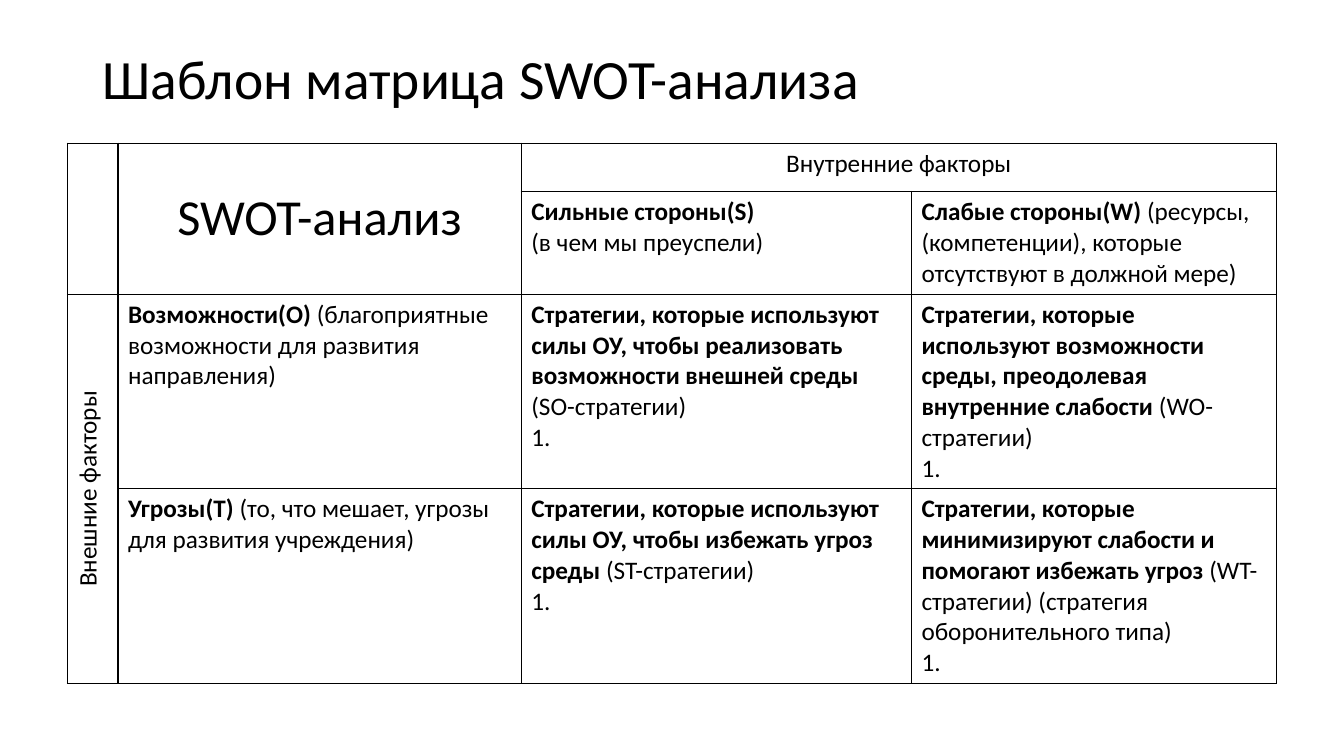
from lxml.etree import SubElement as Sub
from pptx import Presentation
from pptx.dml.color import RGBColor as Rgb
from pptx.enum.text import MSO_ANCHOR as Anchor, PP_ALIGN as Align
from pptx.oxml.ns import qn
from pptx.util import Inches, Pt

COLORS = {"ink": "000000", "paper": "FFFFFF"}
COLS = [0.5, 4, 3.87, 3.62]
ROWS = [0.48, 1.02, 1.93, 1.93]
MERGES = [((0, 0), (1, 0)), ((0, 1), (1, 1)), ((0, 2), (0, 3)), ((2, 0), (3, 0))]

# Headings: (row, column) -> text, size
HEADS = {
    (0, 1): ("SWOT-анализ", 36),
    (0, 2): ("Внутренние факторы", 18),
    (2, 0): ("Внешние факторы", 18),
}

# Factors and strategies: (row, column) -> paragraphs of (bold part, plain part)
NOTES = {
    (1, 2): [("Сильные стороны(S)", ""), ("", "(в чем мы преуспели)")],
    (1, 3): [("Слабые стороны(W) ",
              "(ресурсы, (компетенции), которые отсутствуют в должной мере)")],
    (2, 1): [("Возможности(O) ",
              "(благоприятные возможности для развития направления)")],
    (2, 2): [("Стратегии, которые используют силы ОУ, чтобы реализовать "
              "возможности внешней среды ", "(SO-стратегии)"), ("", "1.")],
    (2, 3): [("Стратегии, которые используют возможности среды, преодолевая "
              "внутренние слабости ", "(WO-стратегии)"), ("", "1.")],
    (3, 1): [("Угрозы(T) ", "(то, что мешает, угрозы для развития учреждения)")],
    (3, 2): [("Стратегии, которые используют силы ОУ, чтобы избежать угроз "
              "среды ", "(ST-стратегии)"), ("", "1.")],
    (3, 3): [("Стратегии, которые минимизируют слабости и помогают избежать "
              "угроз ", "(WT-стратегии) (стратегия оборонительного типа)"),
             ("", "1.")],
}


class Deck:
    font = "Calibri"

    def __init__(self):
        self.prs = Presentation()
        self.prs.slide_width = Inches(13.33)
        self.prs.slide_height = Inches(7.5)
        self.slide = self.prs.slides.add_slide(self.prs.slide_layouts[6])

    def text(self, frame, paras, size, align=Align.LEFT):
        """Fill a text frame with paragraphs of (bold part, plain part)."""
        for i, parts in enumerate(paras):
            para = frame.add_paragraph() if i else frame.paragraphs[0]
            para.alignment = align
            para.font.name = self.font
            para.font.size = Pt(size)
            para.font.color.rgb = Rgb.from_string(COLORS["ink"])
            for part, bold in zip(parts, (True, False)):
                if part:
                    run = para.add_run()
                    run.text = part
                    run.font.bold = bold

    def title(self, text, left, top, width, height, size):
        box = self.slide.shapes.add_textbox(*map(Inches, (left, top, width, height)))
        frame = box.text_frame
        frame.word_wrap = True
        frame.vertical_anchor = Anchor.MIDDLE
        self.text(frame, [("", text)], size)
        frame.paragraphs[0].line_spacing = 0.9

    def border(self, cell):
        props = cell._tc.get_or_add_tcPr()
        for side in ("lnL", "lnR", "lnT", "lnB"):
            line = Sub(props, qn(f"a:{side}"), w=str(Pt(1)))
            fill = Sub(line, qn("a:solidFill"))
            Sub(fill, qn("a:srgbClr"), val=COLORS["ink"])

    def grid(self, left, top, cols, rows):
        size = (left, top, sum(cols), sum(rows))
        frame = self.slide.shapes.add_table(len(rows), len(cols), *map(Inches, size))
        table = frame.table
        table.first_row = table.horz_banding = False
        for col, width in zip(table.columns, cols):
            col.width = Inches(width)
        for row, height in zip(table.rows, rows):
            row.height = Inches(height)
        for cell in table.iter_cells():
            self.border(cell)
            cell.fill.solid()
            cell.fill.fore_color.rgb = Rgb.from_string(COLORS["paper"])
        return table

    def matrix(self, left, top):
        table = self.grid(left, top, COLS, ROWS)
        for start, end in MERGES:
            table.cell(*start).merge(table.cell(*end))
        for spot, (head, size) in HEADS.items():
            self.text(table.cell(*spot).text_frame, [("", head)], size, Align.CENTER)
        for spot, paras in NOTES.items():
            self.text(table.cell(*spot).text_frame, paras, 18)
        table.cell(0, 1).vertical_anchor = Anchor.MIDDLE
        table.cell(2, 0)._tc.get_or_add_tcPr().set("vert", "vert270")


def main():
    deck = Deck()
    deck.title("Шаблон матрица SWOT-анализа", 0.92, 0.48, 11.5, 0.66, 39.6)
    deck.matrix(0.67, 1.42)
    deck.prs.save("out.pptx")


if __name__ == "__main__":
    main()
